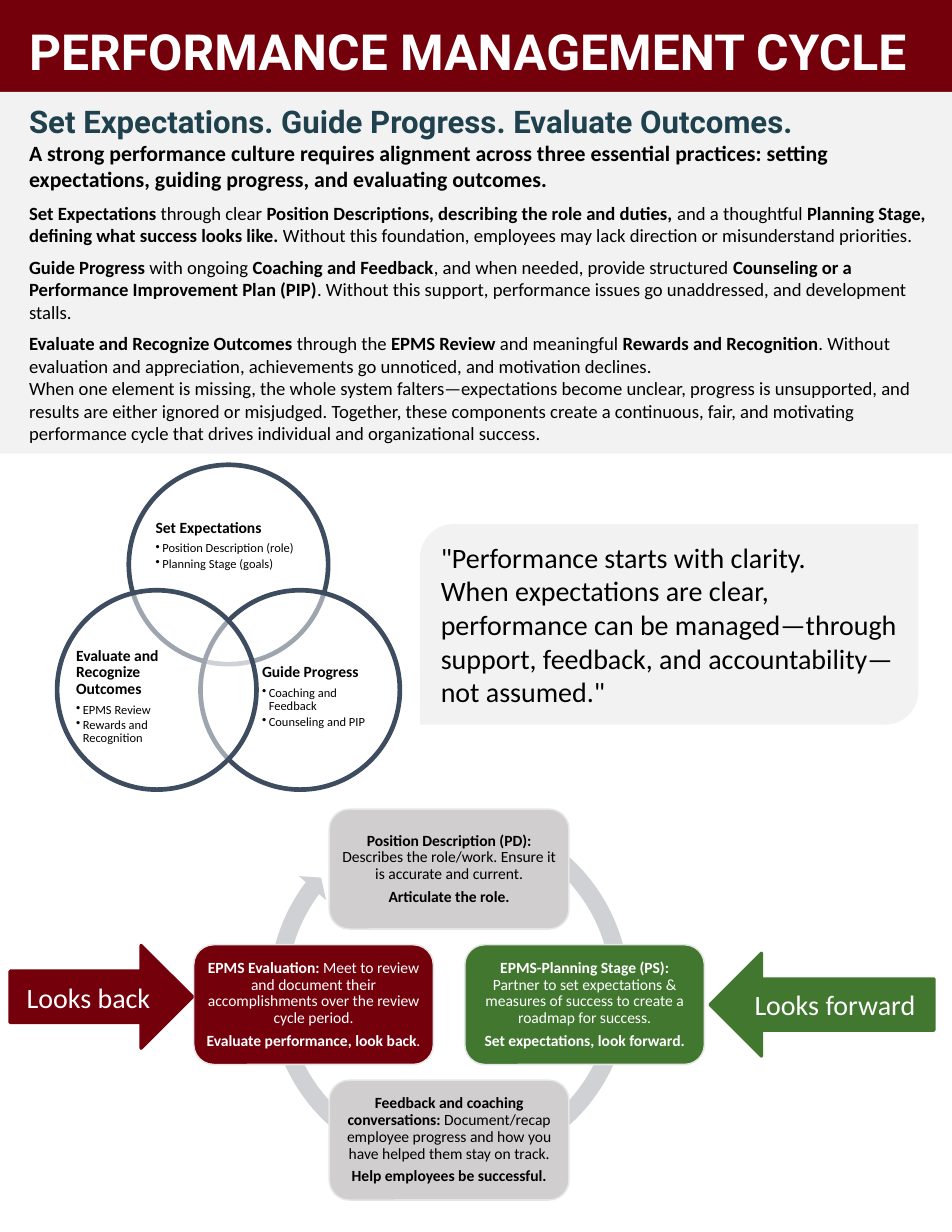
"""Build a one-page handout on the performance management cycle."""
import lxml.etree
import pptx
import pptx.dml.color
import pptx.enum.shapes
import pptx.enum.text
import pptx.oxml.ns
import pptx.util

RGBColor = pptx.dml.color.RGBColor
GARNET = RGBColor(0x73, 0x00, 0x0A)
GREEN = RGBColor(0x42, 0x77, 0x30)
PALE = RGBColor(0xF2, 0xF2, 0xF2)
GREY = RGBColor(0xD0, 0xCE, 0xCE)
EDGE = RGBColor(0xE7, 0xE6, 0xE6)
RING = RGBColor(0xCF, 0xD1, 0xD4)
SLATE = RGBColor(0x3E, 0x4C, 0x60)
TEAL = RGBColor(0x1F, 0x41, 0x4D)
BLACK = RGBColor(0, 0, 0)
WHITE = RGBColor(0xFF, 0xFF, 0xFF)

Pt = pptx.util.Pt
MSO_SHAPE = pptx.enum.shapes.MSO_SHAPE
LEFT = pptx.enum.text.PP_ALIGN.LEFT
CENTER = pptx.enum.text.PP_ALIGN.CENTER
TOP = pptx.enum.text.MSO_ANCHOR.TOP
MIDDLE = pptx.enum.text.MSO_ANCHOR.MIDDLE
qn = pptx.oxml.ns.qn

presentation = pptx.Presentation()
presentation.slide_width = pptx.util.Inches(8.5)
presentation.slide_height = pptx.util.Inches(11)
column = presentation.slide_width / 85
row = presentation.slide_height / 110
slide = presentation.slides.add_slide(presentation.slide_layouts[1])
title, body = slide.placeholders


def add_shape(kind, left, top, width, height, fill, line=None, weight=1):
    """Add a flat preset shape placed on the grid."""
    shape = slide.shapes.add_shape(kind, int(left * column), int(top * row), int(width * column), int(height * row))
    shape.shadow.inherit = False
    shape.fill.solid()
    shape.fill.fore_color.rgb = fill
    if line is None:
        shape.line.fill.background()
    else:
        shape.line.color.rgb = line
        shape.line.width = Pt(weight)
    return shape


def write(shape, lines, color, alignment=LEFT, anchor=MIDDLE, inset=0, spacing=1.0, font="Calibri"):
    """Write (text, size, space after) lines, with ** around bold words."""
    frame = shape.text_frame
    frame.word_wrap = True
    frame.auto_size = pptx.enum.text.MSO_AUTO_SIZE.NONE
    frame.vertical_anchor = anchor
    frame.margin_left = frame.margin_right = int(inset * column)
    frame.margin_top = frame.margin_bottom = int(min(inset, 0.5) * row)
    for index, (text, size, after) in enumerate(lines):
        paragraph = frame.add_paragraph() if index else frame.paragraphs[0]
        bulleted = text.startswith("•")
        paragraph.level = int(bulleted)
        paragraph.alignment = alignment
        paragraph.line_spacing = spacing
        paragraph.space_before = Pt(0)
        paragraph.space_after = Pt(after)
        properties = paragraph._p.get_or_add_pPr()
        indent = int(0.6 * column) if bulleted else 0
        properties.set("marL", str(indent))
        properties.set("indent", str(-indent))
        if bulleted:
            lxml.etree.SubElement(properties, qn("a:buChar")).set("char", "•")
        else:
            lxml.etree.SubElement(properties, qn("a:buNone"))
        paragraph.font.name = font
        paragraph.font.size = Pt(size)
        paragraph.font.color.rgb = color
        for part, words in enumerate(text.removeprefix("•").split("**")):
            if words:
                run = paragraph.add_run()
                run.text = words
                run.font.bold = part % 2 == 1


header_band = add_shape(MSO_SHAPE.RECTANGLE, 0, 0, 85, 8.5, GARNET)
title._element.addprevious(header_band._element)
intro_band = add_shape(MSO_SHAPE.RECTANGLE, 0, 8.2, 85, 32.3, PALE)
body._element.addprevious(intro_band._element)
subtitle = slide.shapes.add_textbox(0, 0, 0, 0)
for shape, top, width, height in [(title, 1, 82.4, 6.1), (subtitle, 8.6, 82.2, 3.9), (body, 12.5, 80.8, 27.4)]:
    shape.left, shape.top = int(2.6 * column), int(top * row)
    shape.width, shape.height = int(width * column), int(height * row)

write(title, [("**PERFORMANCE MANAGEMENT CYCLE**", 32, 0)], WHITE, anchor=TOP, spacing=Pt(44.8), font="Roboto")
write(subtitle, [("**Set Expectations. Guide Progress. Evaluate Outcomes.**", 20, 0)], TEAL,
      anchor=TOP, spacing=Pt(28), font="Roboto")
write(body, [
    ("**A strong performance culture requires alignment across three essential practices: setting "
     "expectations, guiding progress, and evaluating outcomes.**", 14, 6),
    ("**Set Expectations** through clear **Position Descriptions, describing the role and duties,** and a "
     "thoughtful **Planning Stage, defining what success looks like. **Without this foundation, employees "
     "may lack direction or misunderstand priorities.", 12, 6),
    ("**Guide Progress** with ongoing **Coaching and Feedback**, and when needed, provide structured "
     "**Counseling or a Performance Improvement Plan (PIP)**. Without this support, performance issues go "
     "unaddressed, and development stalls.", 12, 6),
    ("**Evaluate and Recognize Outcomes** through the **EPMS Review** and meaningful **Rewards and "
     "Recognition**. Without evaluation and appreciation, achievements go unnoticed, and motivation "
     "declines.", 12, 0),
    ("When one element is missing, the whole system falters—expectations become unclear, progress is "
     "unsupported, and results are either ignored or misjudged. Together, these components create a "
     "continuous, fair, and motivating performance cycle that drives individual and organizational "
     "success.", 12, 0),
], BLACK, anchor=TOP)

cycle_ring = add_shape(MSO_SHAPE.CIRCULAR_ARROW, 23.2, 71.6, 33.8, 33.8, RING)
for index, value in enumerate([0.047, 2.729, 130.216, 179.025, 0.048]):
    cycle_ring.adjustments[index] = value

step = 12.1
for across, down, fill, color, text, motto in [
    (0, -1, GREY, BLACK, "**Position Description (PD): **Describes the role/work. Ensure it is accurate and current.",
     "**Articulate the role.**"),
    (1, 0, GREEN, WHITE, "**EPMS-Planning Stage (PS): **Partner to set expectations & measures of success to "
     "create a roadmap for success.", "**Set expectations, look forward.**"),
    (0, 1, GREY, BLACK, "**Feedback and coaching conversations: **Document/recap employee progress and how "
     "you have helped them stay on track.", "**Help employees be successful.**"),
    (-1, 0, GARNET, WHITE, "**EPMS Evaluation: **Meet to review and document their accomplishments over the "
     "review cycle period.", "**Evaluate performance, look back**."),
]:
    stage = add_shape(MSO_SHAPE.ROUNDED_RECTANGLE, 29.4 + across * step, 84.35 + down * step, 21.4, 10.7, fill, EDGE)
    write(stage, [(text, 10, 3.5), (motto, 10, 0)], color, CENTER, inset=0.4, spacing=0.9)

for left, top, text_box, heading, bullets in [
    (11.5, 41.5, (13.9, 44.7, 13, 8), "Set Expectations", ["Position Description (role)", "Planning Stage (goals)"]),
    (17.9, 52.7, (23.4, 57.3, 10.7, 9.8), "Guide Progress", ["Coaching and Feedback", "Counseling and PIP"]),
    (5.1, 52.7, (6.8, 57.3, 10.7, 9.8), "Evaluate and Recognize Outcomes", ["EPMS Review", "Rewards and Recognition"]),
]:
    circle = add_shape(MSO_SHAPE.OVAL, left, top, 17.8, 17.8, WHITE, SLATE, 3)
    fill_color = circle._element.spPr.find(qn("a:solidFill"))[0]
    lxml.etree.SubElement(fill_color, qn("a:alpha")).set("val", "50000")
    x, y, width, height = text_box
    label = slide.shapes.add_textbox(int(x * column), int(y * row), int(width * column), int(height * row))
    lines = [(f"**{heading}**", 10, 3.5)] + [(f"•{bullet}", 8, 1.2) for bullet in bullets]
    write(label, lines, BLACK, spacing=0.9)

for kind, left, top, width, fill, text in [
    (MSO_SHAPE.RIGHT_ARROW, 0.9, 84.4, 16.3, GARNET, "Looks back"),
    (MSO_SHAPE.LEFT_ARROW, 63.4, 85.1, 20, GREEN, "Looks forward"),
]:
    arrow = add_shape(kind, left, top, width, 9.2, fill, fill, 2)
    write(arrow, [(text, 18, 0)], WHITE, CENTER, inset=1)

quote = add_shape(MSO_SHAPE.ROUND_2_DIAG_RECTANGLE, 37.5, 46.8, 44.5, 17.9, PALE)
write(quote, [
    ("\"Performance starts with clarity.", 18, 0),
    ("When expectations are clear, performance can be managed—through support, feedback, and "
     "accountability—not assumed.\"", 18, 0),
], BLACK, inset=1)

presentation.save("out.pptx")
